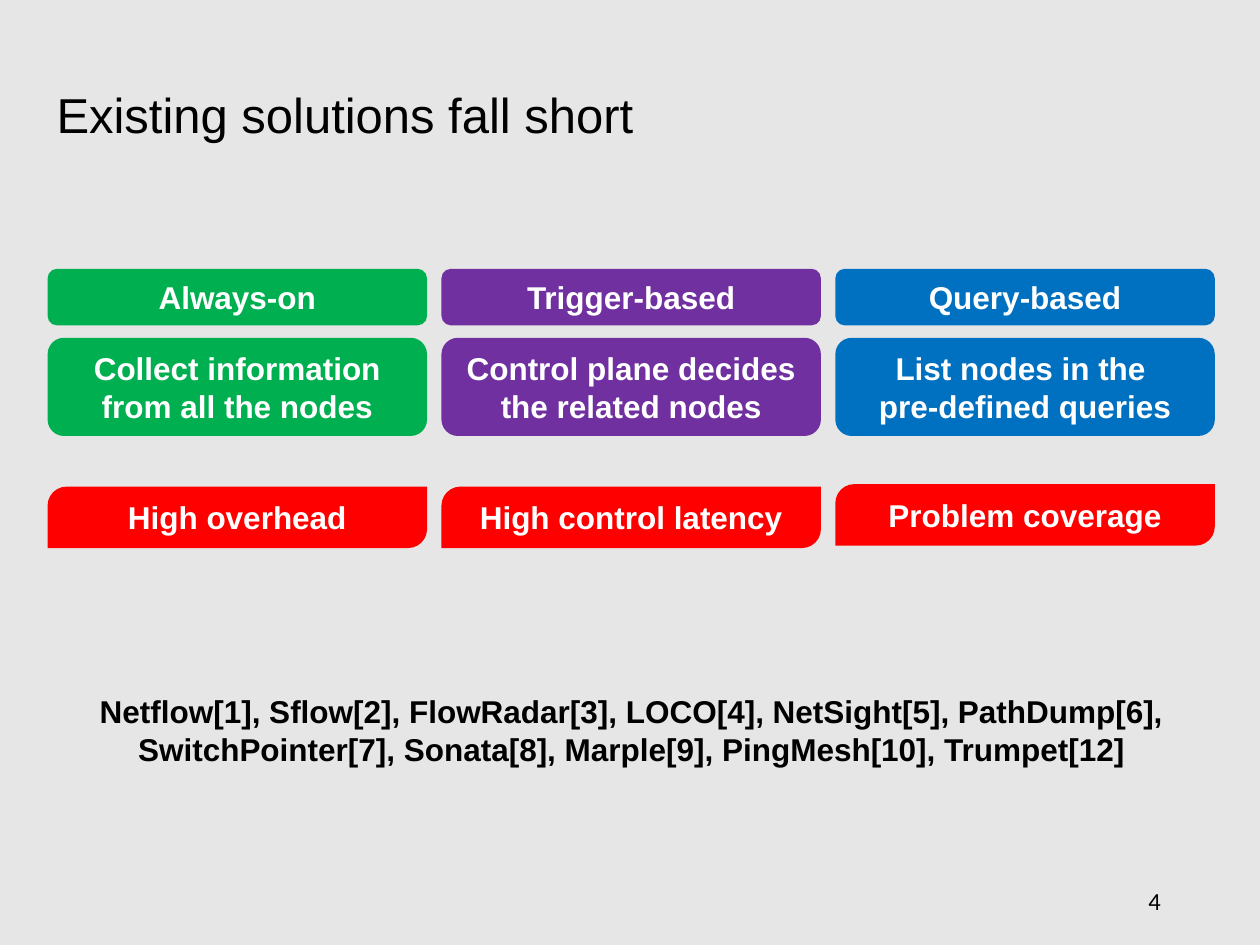
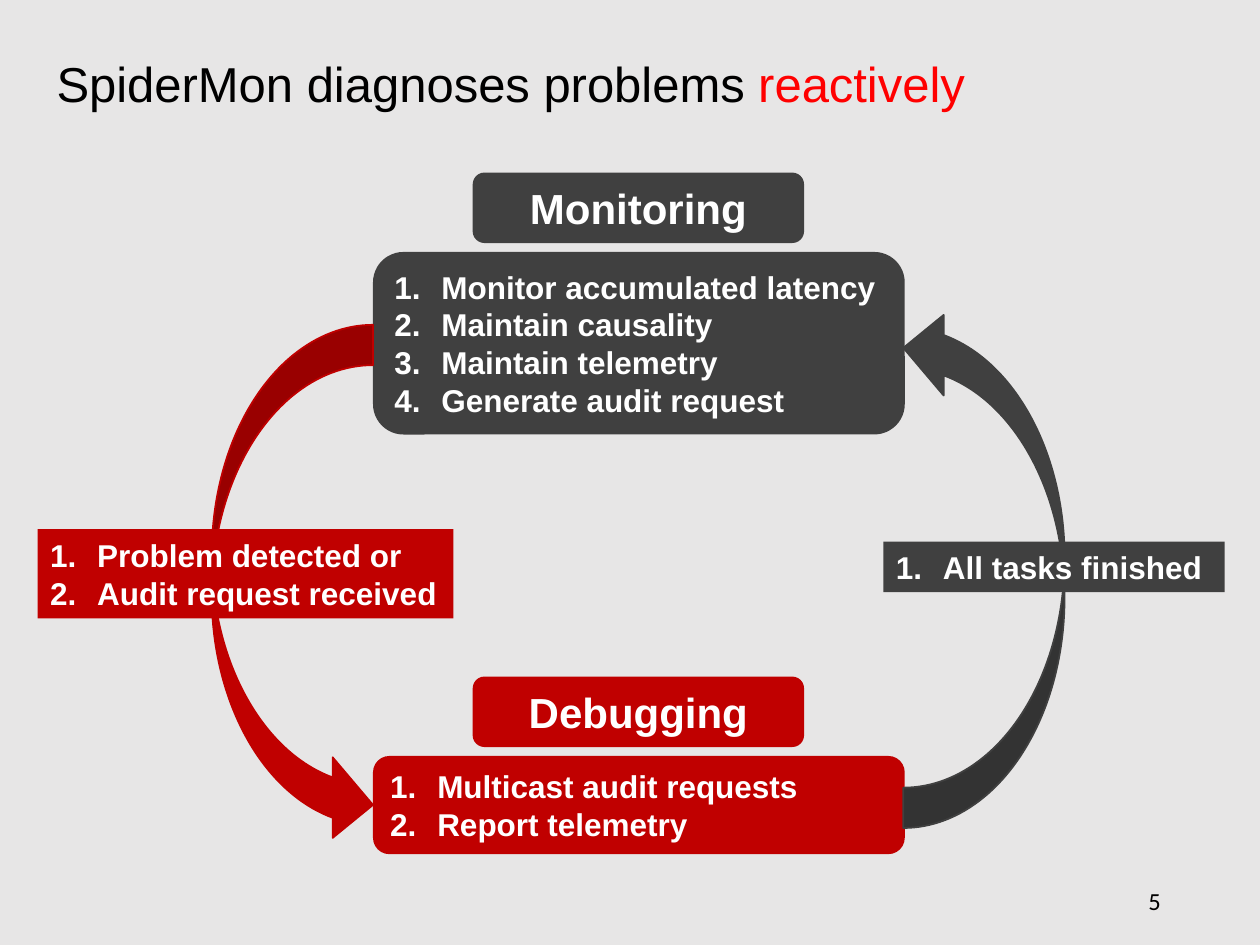
"""Build two slides on network diagnosis: existing solutions and the SpiderMon cycle."""
from pptx import Presentation
from pptx.dml.color import RGBColor
from pptx.enum.shapes import MSO_SHAPE as Shape
from pptx.enum.text import MSO_ANCHOR as Anchor, PP_ALIGN as Align
from pptx.oxml.ns import qn
from pptx.util import Cm, Pt
from lxml.etree import SubElement

BLACK, WHITE, GRAY, RED = "000000", "FFFFFF", "E7E6E6", "FF0000"
GREEN, PURPLE, BLUE = "00B050", "7030A0", "0070C0"
MONITOR, DEBUG = "404040", "C00000"

TITLE_FONT = {"name": "Arial", "size": Pt(28)}
HEADING_FONT = {"name": "Arial", "size": Pt(24), "bold": True}
BODY_FONT = {"name": "Arial", "size": Pt(18), "bold": True}
NUMBER_FONT = {"name": "Calibri", "size": Pt(14)}

SOLUTIONS = [
    {"name": "Always-on", "color": GREEN, "drawback": "High overhead", "drawback_top": 9.81,
     "method": ["Collect information", "from all the nodes"]},
    {"name": "Trigger-based", "color": PURPLE, "drawback": "High control latency", "drawback_top": 9.81,
     "method": ["Control plane decides the related nodes"]},
    {"name": "Query-based", "color": BLUE, "drawback": "Problem coverage", "drawback_top": 9.76,
     "method": ["List nodes in the ", "pre-defined queries"]},
]
COLUMN_LEFT, COLUMN_WIDTH, COLUMN_GAP = 0.96, 7.65, 0.29
SYSTEMS = [
    "Netflow[1], Sflow[2], FlowRadar[3], LOCO[4], NetSight[5], PathDump[6], ",
    "SwitchPointer[7], Sonata[8], Marple[9], PingMesh[10], Trumpet[12]",
]

PHASES = [
    {"name": "Monitoring", "color": MONITOR, "top": 3.48, "height": 3.68,
     "steps": ["Monitor accumulated latency", "Maintain causality",
               "Maintain telemetry", "Generate audit request"]},
    {"name": "Debugging", "color": DEBUG, "top": 13.64, "height": 1.98,
     "steps": ["Multicast audit requests", "Report telemetry"]},
]
TRANSITIONS = [
    {"color": DEBUG, "arrow": (4.27, 6.55, 3.25, 10.49), "rotation": 0,
     "label": (0.76, 10.67, 8.38, 1.8),
     "conditions": ["Problem detected or", "Audit request received"]},
    {"color": MONITOR, "arrow": (18.21, 6.2, 3.25, 10.49), "rotation": 180,
     "label": (17.81, 10.92, 6.88, 1.02),
     "conditions": ["All tasks finished"]},
]


def rgb(color):
    """Turn a hex string into a colour."""
    return RGBColor.from_string(color)


def write(shape, paragraphs, font, color=WHITE, align=Align.CENTER, numbered=False):
    """Fill a shape with paragraphs, each a string or a list of (text, colour) runs."""
    frame = shape.text_frame
    frame.word_wrap = True
    frame.vertical_anchor = Anchor.MIDDLE
    for index, content in enumerate(paragraphs):
        paragraph = frame.add_paragraph() if index else frame.paragraphs[0]
        paragraph.alignment = Align.LEFT if numbered else align
        if numbered:
            properties = paragraph._p.get_or_add_pPr()
            properties.set("marL", str(Cm(0.95)))
            properties.set("indent", str(-Cm(0.95)))
            SubElement(properties, qn("a:buFont"), typeface="+mj-lt")
            SubElement(properties, qn("a:buAutoNum"), type="arabicPeriod")
        runs = [(content, color)] if isinstance(content, str) else content
        for text, run_color in runs:
            run = paragraph.add_run()
            run.text = text
            for key, value in font.items():
                setattr(run.font, key, value)
            run.font.color.rgb = rgb(run_color)


def add_text(slide, box, paragraphs, font, align):
    """Add a text box with black text and return it."""
    shape = slide.shapes.add_textbox(*map(Cm, box))
    write(shape, paragraphs, font, BLACK, align)
    return shape


def add_block(slide, kind, box, fill, paragraphs=(), font=BODY_FONT, **style):
    """Add a flat filled shape, with text if any, and return it."""
    shape = slide.shapes.add_shape(kind, *map(Cm, box))
    shape.shadow.inherit = False
    shape.fill.solid()
    shape.fill.fore_color.rgb = rgb(fill)
    shape.line.fill.background()
    write(shape, paragraphs, font, **style)
    return shape


def add_slide(presentation, title, title_top, number):
    """Add a blank slide with its title and number."""
    slide = presentation.slides.add_slide(presentation.slide_layouts[6])
    heading = add_text(slide, (0.89, title_top, 23.6, 2.16), [title], TITLE_FONT, Align.LEFT)
    heading.text_frame.paragraphs[0].line_spacing = 0.9
    add_text(slide, (17.93, 17.65, 5.72, 1.02), [str(number)], NUMBER_FONT, Align.RIGHT)
    return slide


def build_solutions(presentation):
    """Compare the three kinds of existing solutions in columns."""
    slide = add_slide(presentation, "Existing solutions fall short", 1.3, 4)
    for index, solution in enumerate(SOLUTIONS):
        left = COLUMN_LEFT + index * (COLUMN_WIDTH + COLUMN_GAP)
        rounded, color = Shape.ROUNDED_RECTANGLE, solution["color"]
        add_block(slide, rounded, (left, 5.42, COLUMN_WIDTH, 1.14), color, [solution["name"]])
        add_block(slide, rounded, (left, 6.81, COLUMN_WIDTH, 1.98), color, solution["method"])
        drawback = add_block(slide, Shape.ROUND_2_DIAG_RECTANGLE,
                             (left, solution["drawback_top"], COLUMN_WIDTH, 1.24),
                             RED, [solution["drawback"]])
        drawback.adjustments[0] = 0.31
    add_block(slide, Shape.ROUNDED_RECTANGLE, (1.65, 13.72, 22.17, 1.98), GRAY, SYSTEMS, color=BLACK)


def build_cycle(presentation):
    """Draw the cycle between monitoring and debugging."""
    title = [("SpiderMon diagnoses problems ", BLACK), ("reactively", RED)]
    slide = add_slide(presentation, title, 0.66, 5)
    for phase in PHASES:
        top, color = phase["top"], phase["color"]
        add_block(slide, Shape.ROUNDED_RECTANGLE, (9.53, top, 6.68, 1.42), color,
                  [phase["name"]], HEADING_FONT)
        add_block(slide, Shape.ROUNDED_RECTANGLE, (7.52, top + 1.6, 10.72, phase["height"]), color,
                  phase["steps"], numbered=True)
    for transition in TRANSITIONS:
        color = transition["color"]
        arrow = add_block(slide, Shape.CURVED_RIGHT_ARROW, transition["arrow"], color)
        arrow.rotation = transition["rotation"]
        arrow.line.color.rgb = rgb(color)
        arrow.line.width = Pt(1)
        add_block(slide, Shape.RECTANGLE, transition["label"], color,
                  transition["conditions"], numbered=True)


def main():
    """Build and save the presentation."""
    presentation = Presentation()
    presentation.slide_width, presentation.slide_height = Cm(25.4), Cm(19.05)
    background = presentation.slide_master.background.fill
    background.solid()
    background.fore_color.rgb = rgb(GRAY)
    build_solutions(presentation)
    build_cycle(presentation)
    presentation.save("out.pptx")


if __name__ == "__main__":
    main()
